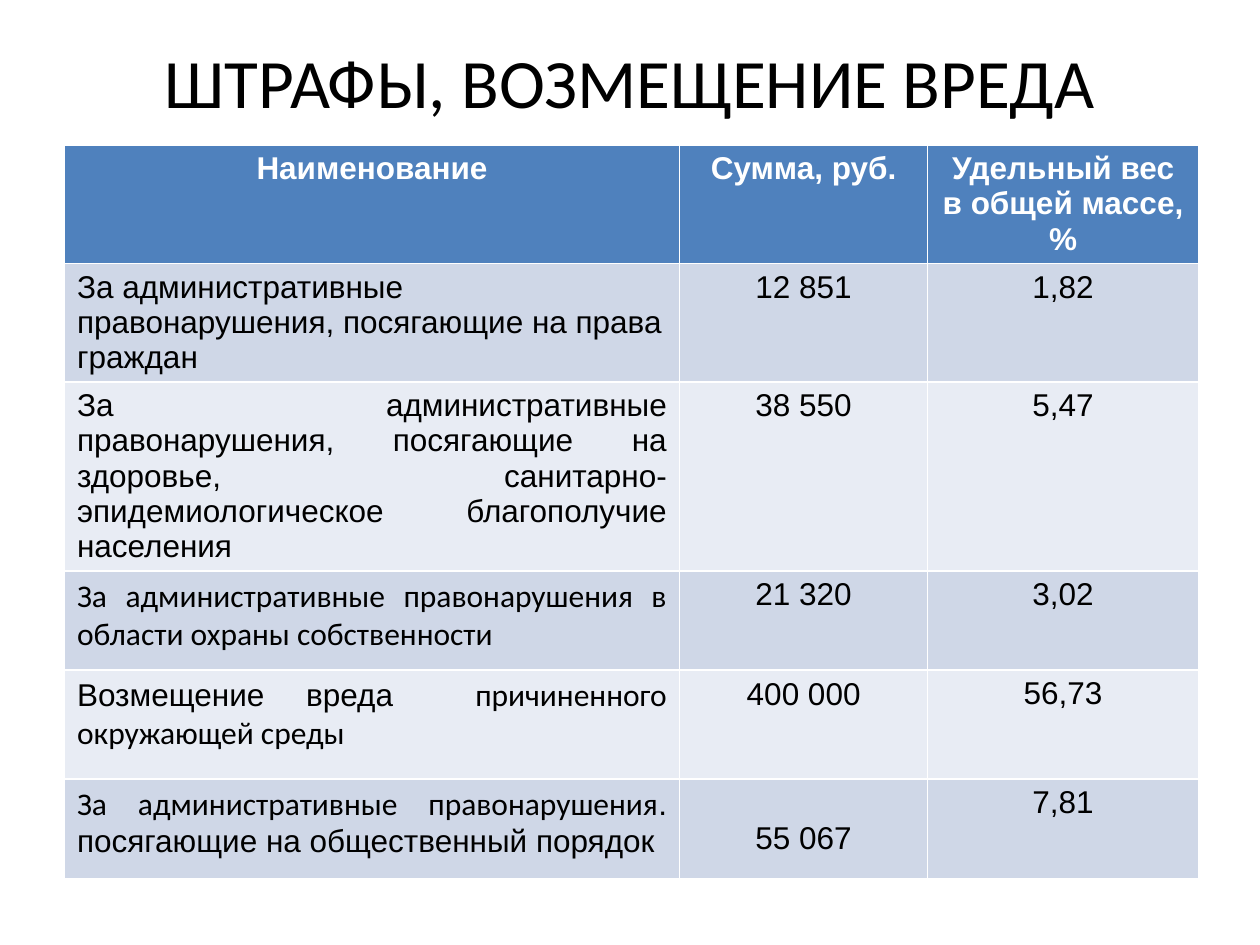
import dataclasses

import pptx
import pptx.dml.color
import pptx.enum.text
import pptx.util

Cm = pptx.util.Cm
Pt = pptx.util.Pt
Align = pptx.enum.text.PP_ALIGN

WIDTHS = (12.4, 5, 5.46)
HEAD = ("Наименование", "Сумма, руб.", "Удельный вес в общей массе, %")
HEAD_FILL = "4F81BD"
BANDS = ("CFD7E7", "E8ECF4")
TEXT_FORMAT = {"size": Pt(18), "bold": False}
HEAD_FORMAT = {"size": Pt(18), "bold": True}
TITLE_FORMAT = {"size": Pt(39.6), "name": "Calibri"}


@dataclasses.dataclass
class Piece:
    text: str
    font: str = "Arial"


@dataclasses.dataclass
class Fine:
    label: tuple[Piece, ...]
    total: str
    share: str
    height: float
    align: Align = Align.JUSTIFY
    drop: float = 0.13  # top margin of the total cell


FINES = (
    Fine((Piece("За административные правонарушения, посягающие на права граждан"),),
         "12 851", "1,82", 2, Align.LEFT),
    Fine((Piece("За административные правонарушения, посягающие на здоровье, "
                "санитарно-эпидемиологическое благополучие населения"),),
         "38 550", "5,47", 3.73),
    Fine((Piece("За административные правонарушения в области охраны собственности",
                "Calibri"),),
         "21 320", "3,02", 2),
    Fine((Piece("Возмещение вреда "), Piece(" причиненного окружающей среды", "Calibri")),
         "400 000", "56,73", 2.2),
    Fine((Piece("За административные правонарушения", "Calibri"),
          Piece(". посягающие на общественный порядок")),
         "55 067", "7,81", 2, drop=0.84),
)


def color(code: str) -> pptx.dml.color.RGBColor:
    return pptx.dml.color.RGBColor.from_string(code)


def style(font, values: dict, code: str) -> None:
    for key, value in values.items():
        setattr(font, key, value)
    font.color.rgb = color(code)


def fill_cell(cell, label: tuple[Piece, ...], fill: str, align: Align = Align.CENTER,
              values: dict = TEXT_FORMAT, ink: str = "000000") -> None:
    cell.fill.solid()
    cell.fill.fore_color.rgb = color(fill)
    para = cell.text_frame.paragraphs[0]
    para.alignment = align
    for piece in label:
        run = para.add_run()
        run.text = piece.text
        style(run.font, {**values, "name": piece.font}, ink)


def add_title(slide, text: str) -> None:
    title = slide.shapes.title
    place = {"left": Cm(1.27), "top": Cm(0.76), "width": Cm(22.86), "height": Cm(1.75)}
    for key, value in place.items():
        setattr(title, key, value)
    frame = title.text_frame
    frame.text = text
    frame.auto_size = pptx.enum.text.MSO_AUTO_SIZE.NONE
    frame.vertical_anchor = pptx.enum.text.MSO_ANCHOR.MIDDLE
    para = frame.paragraphs[0]
    para.alignment = Align.CENTER
    style(para.runs[0].font, TITLE_FORMAT, "000000")


def add_fines(slide) -> None:
    heights = (2, *(fine.height for fine in FINES))
    table = slide.shapes.add_table(
        len(heights), len(WIDTHS), Cm(1.3), Cm(2.92),
        Cm(sum(WIDTHS)), Cm(sum(heights))).table
    for col, width in zip(table.columns, WIDTHS):
        col.width = Cm(width)
    for row, height in zip(table.rows, heights):
        row.height = Cm(height)
    for col, text in enumerate(HEAD):
        fill_cell(table.cell(0, col), (Piece(text),), HEAD_FILL,
                  values=HEAD_FORMAT, ink="FFFFFF")
    for row, fine in enumerate(FINES, 1):
        band = BANDS[(row - 1) % 2]
        fill_cell(table.cell(row, 0), fine.label, band, fine.align)
        fill_cell(table.cell(row, 1), (Piece(fine.total),), band)
        fill_cell(table.cell(row, 2), (Piece(fine.share),), band)
        table.cell(row, 1).margin_top = Cm(fine.drop)


def main() -> None:
    deck = pptx.Presentation()
    deck.slide_width, deck.slide_height = Cm(25.4), Cm(19.05)
    slide = deck.slides.add_slide(deck.slide_layouts[5])
    add_title(slide, "ШТРАФЫ, ВОЗМЕЩЕНИЕ ВРЕДА")
    add_fines(slide)
    deck.save("out.pptx")


if __name__ == "__main__":
    main()
